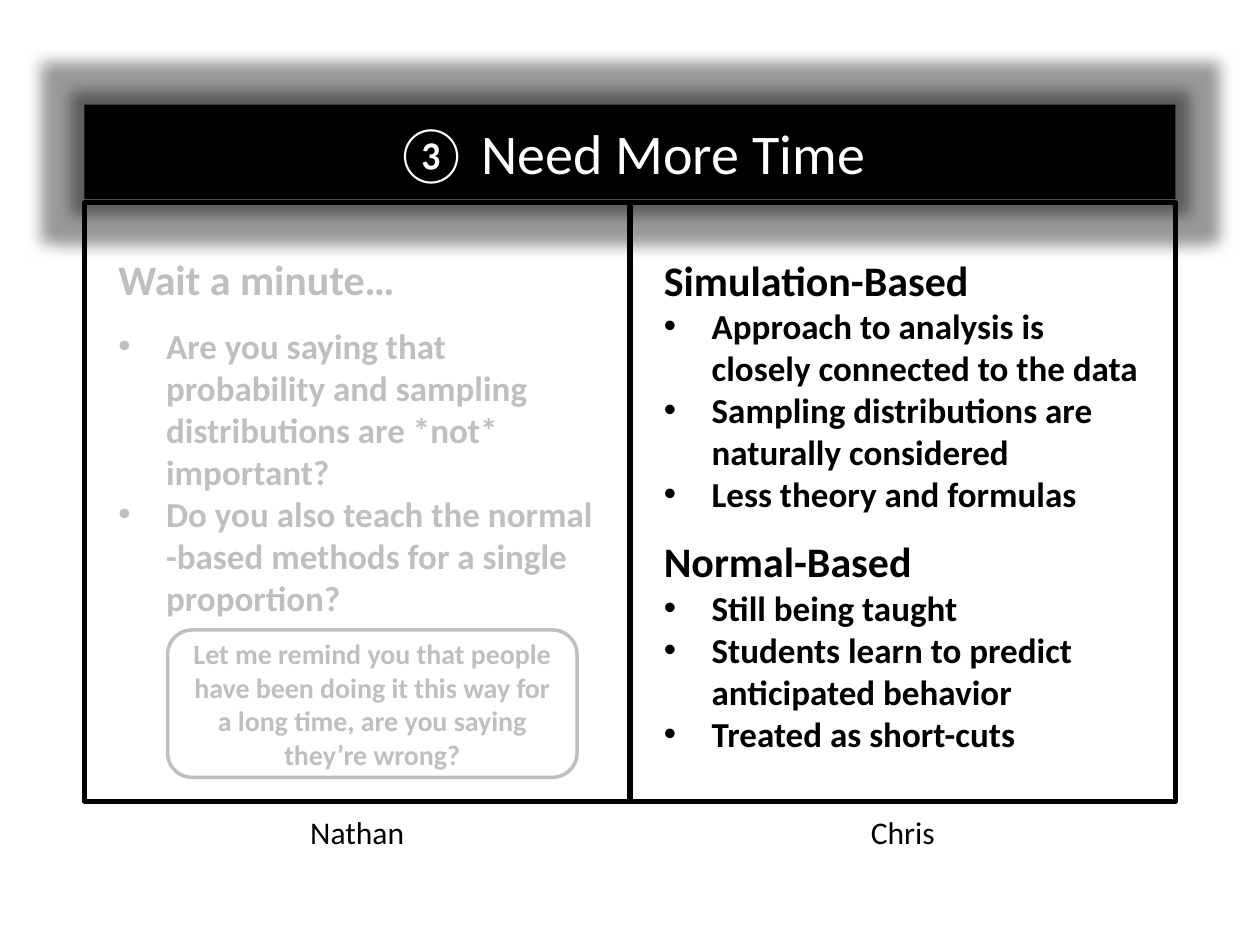
from lxml.etree import SubElement
from pptx import Presentation
from pptx.dml.color import RGBColor
from pptx.enum.shapes import MSO_SHAPE as SHAPE
from pptx.enum.text import MSO_ANCHOR as ANCHOR, PP_ALIGN as ALIGN
from pptx.oxml import parse_xml
from pptx.oxml.ns import qn
from pptx.util import Inches, Pt

BLACK, WHITE, GREY = "000000", "FFFFFF", "BFBFBF"
FONT = "Calibri"

# Two equal columns between the side margins
MARGIN, COL_W = 0.67, 4.33
HEADER_Y, HEADER_H = 0.83, 0.75
PANEL_Y, PANEL_H = 1.61, 4.75
INSET = 0.17
GAP = 12

HEADING = dict(size=24, bold=True)
BULLET = dict(size=20, bold=True)

WAIT = [("Wait a minute…", [
    "Are you saying that probability and sampling distributions are *not* important?",
    "Do you also teach the normal -based methods for a single proportion?"])]
METHODS = [
    ("Simulation-Based", [
        "Approach to analysis is closely connected to the data",
        "Sampling distributions are naturally considered",
        "Less theory and formulas"]),
    ("Normal-Based", [
        "Still being taught",
        "Students learn to predict anticipated behavior",
        "Treated as short-cuts"])]
REMINDER = ("Let me remind you that people have been doing it this way for "
            "a long time, are you saying they’re wrong?")


def rgb(value):
    return RGBColor.from_string(value)


def col_x(col):
    return MARGIN + col * COL_W


def write(p, text, size, color=BLACK, bold=False):
    r = p.add_run()
    r.text = text
    fmt = dict(name=FONT, size=Pt(size), bold=bold)
    for key, value in fmt.items():
        setattr(r.font, key, value)
    r.font.color.rgb = rgb(color)


def add_box(s, kind, at, fill=None, line=None, width=0):
    sp = s.shapes.add_shape(kind, *map(Inches, at))
    sp.shadow.inherit = False
    if fill:
        sp.fill.solid()
        sp.fill.fore_color.rgb = rgb(fill)
    else:
        sp.fill.background()
    if line:
        sp.line.color.rgb = rgb(line)
        sp.line.width = Pt(width)
    else:
        sp.line.fill.background()
    return sp


def add_label(sp, text, size, color, bold=False):
    tf = sp.text_frame
    tf.word_wrap, tf.vertical_anchor = True, ANCHOR.MIDDLE
    p = tf.paragraphs[0]
    p.alignment = ALIGN.CENTER
    write(p, text, size, color, bold)


def add_text(s, at):
    tf = s.shapes.add_textbox(*map(Inches, at)).text_frame
    tf.word_wrap = True
    return tf


def add_glow(sp, radius, alpha):
    effects = sp._element.spPr.find(qn("a:effectLst"))
    effects.append(parse_xml(
        '<a:glow xmlns:a="http://schemas.openxmlformats.org/drawingml/2006/main"'
        f' rad="{Inches(radius)}"><a:srgbClr val="{BLACK}">'
        f'<a:alpha val="{alpha * 1000}"/></a:srgbClr></a:glow>'))


def set_bullet(p):
    pPr = p._p.get_or_add_pPr()
    pPr.set("marL", str(Inches(0.38)))
    pPr.set("indent", str(-Inches(0.38)))
    SubElement(pPr, qn("a:buFont"), typeface="Arial")
    SubElement(pPr, qn("a:buChar"), char="•")


def add_sections(s, at, sections, color, heading_gap=0):
    tf = add_text(s, at)
    for i, (heading, bullets) in enumerate(sections):
        p = tf.add_paragraph() if i else tf.paragraphs[0]
        p.space_before = Pt(GAP if i else 0)
        p.space_after = Pt(heading_gap)
        write(p, heading, color=color, **HEADING)
        for text in bullets:
            p = tf.add_paragraph()
            set_bullet(p)
            write(p, text, color=color, **BULLET)


def main():
    prs = Presentation()
    prs.slide_width, prs.slide_height = Inches(10), Inches(7.5)
    s = prs.slides.add_slide(prs.slide_layouts[6])

    # Header with a soft glow
    header = add_box(s, SHAPE.RECTANGLE,
                     (MARGIN, HEADER_Y, 2 * COL_W, HEADER_H), fill=BLACK)
    add_glow(header, 0.24, 40)
    add_label(header, "③ Need More Time", 32, WHITE)

    # Panels
    for col in range(2):
        add_box(s, SHAPE.RECTANGLE, (col_x(col), PANEL_Y, COL_W, PANEL_H),
                line=BLACK, width=3)

    # Left: questions and the reminder
    text_w = COL_W - 2 * INSET
    add_sections(s, (col_x(0) + INSET, 1.96, text_w, 3.37), WAIT, GREY, GAP)
    reminder = add_box(s, SHAPE.ROUNDED_RECTANGLE, (1.33, 5, 3.25, 1.17),
                       line=GREY, width=2)
    add_label(reminder, REMINDER, 16, GREY, True)

    # Right: the two methods
    add_sections(s, (col_x(1) + INSET, 1.97, text_w, 4.11), METHODS, BLACK)

    # Speaker names
    for col, name in enumerate(("Nathan", "Chris")):
        p = add_text(s, (col_x(col), 6.4, COL_W, 0.4)).paragraphs[0]
        p.alignment = ALIGN.CENTER
        write(p, name, 18)

    prs.save("out.pptx")


if __name__ == "__main__":
    main()
